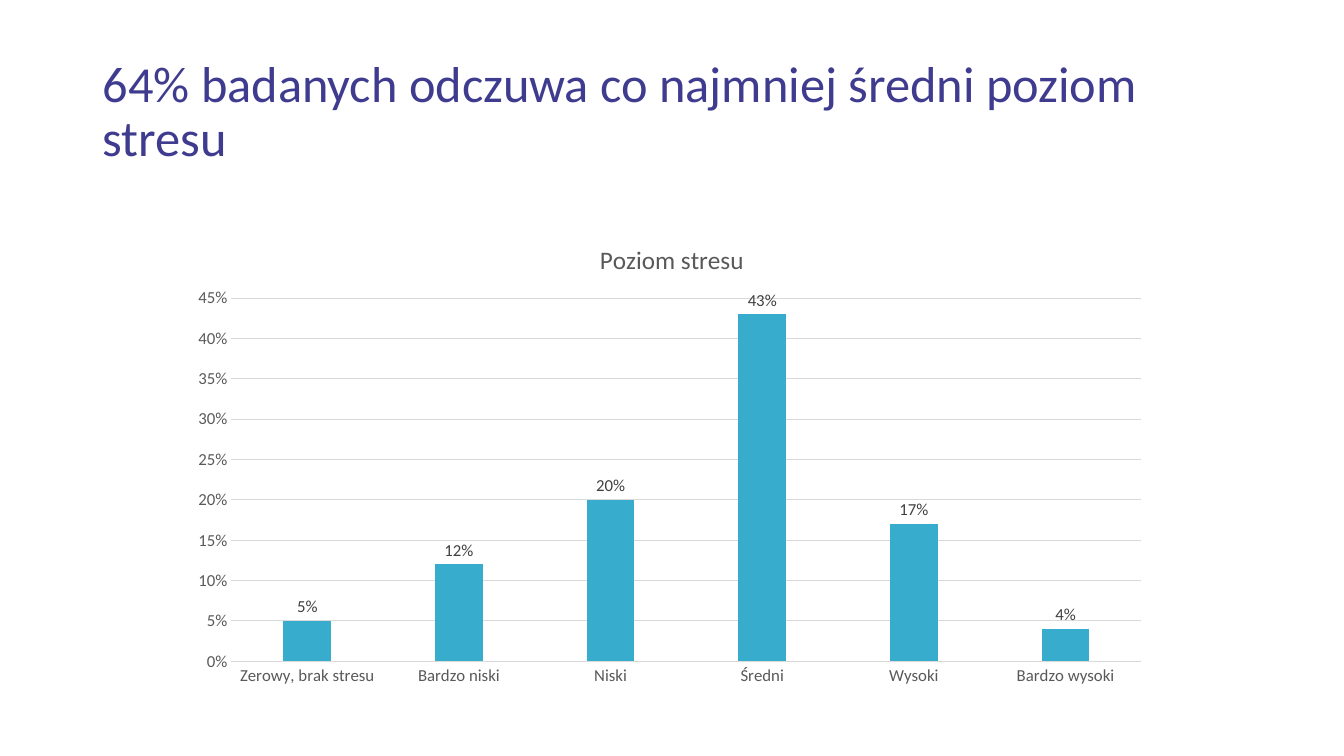
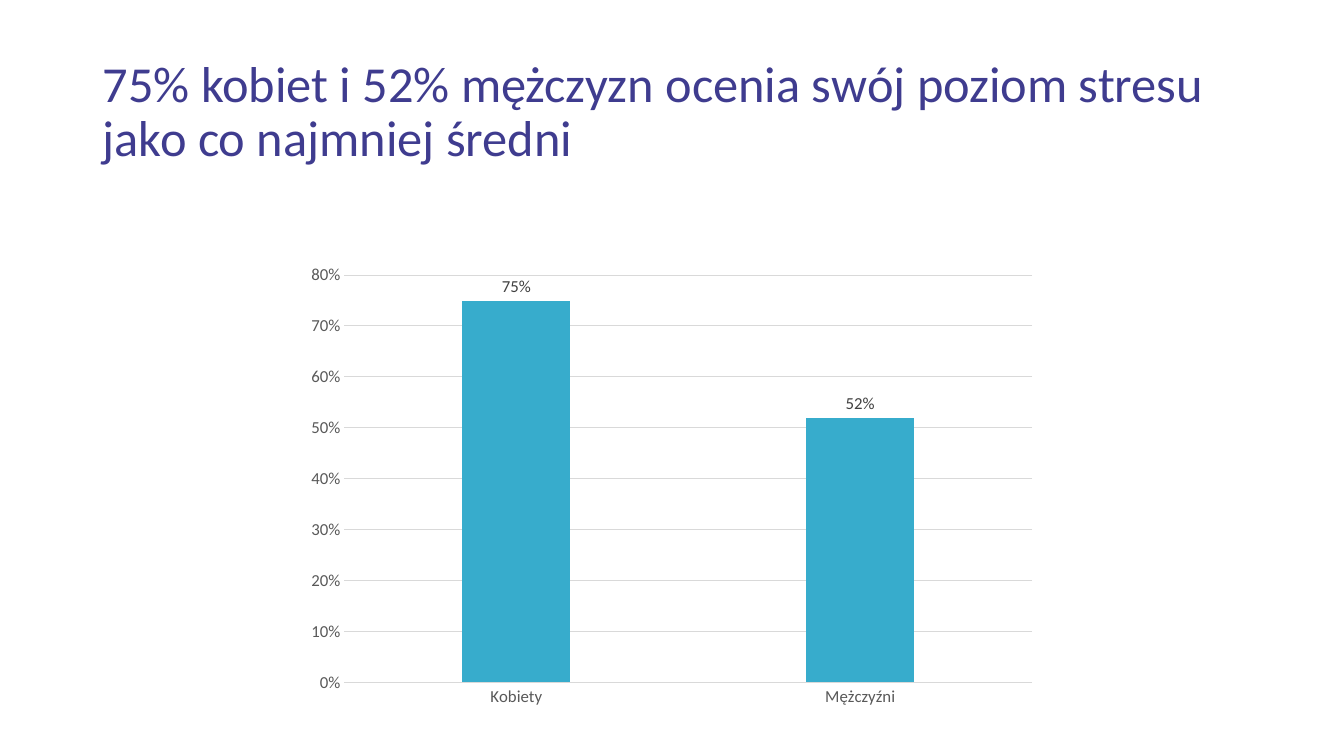
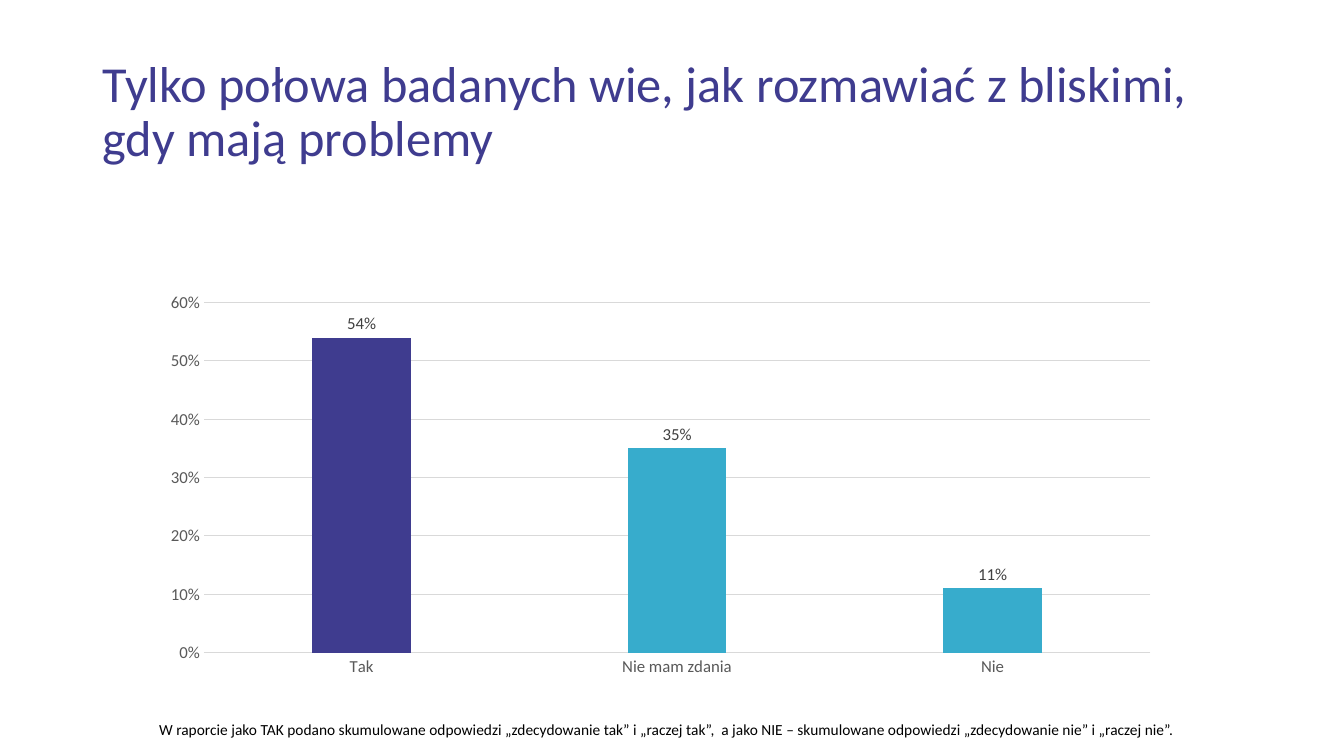
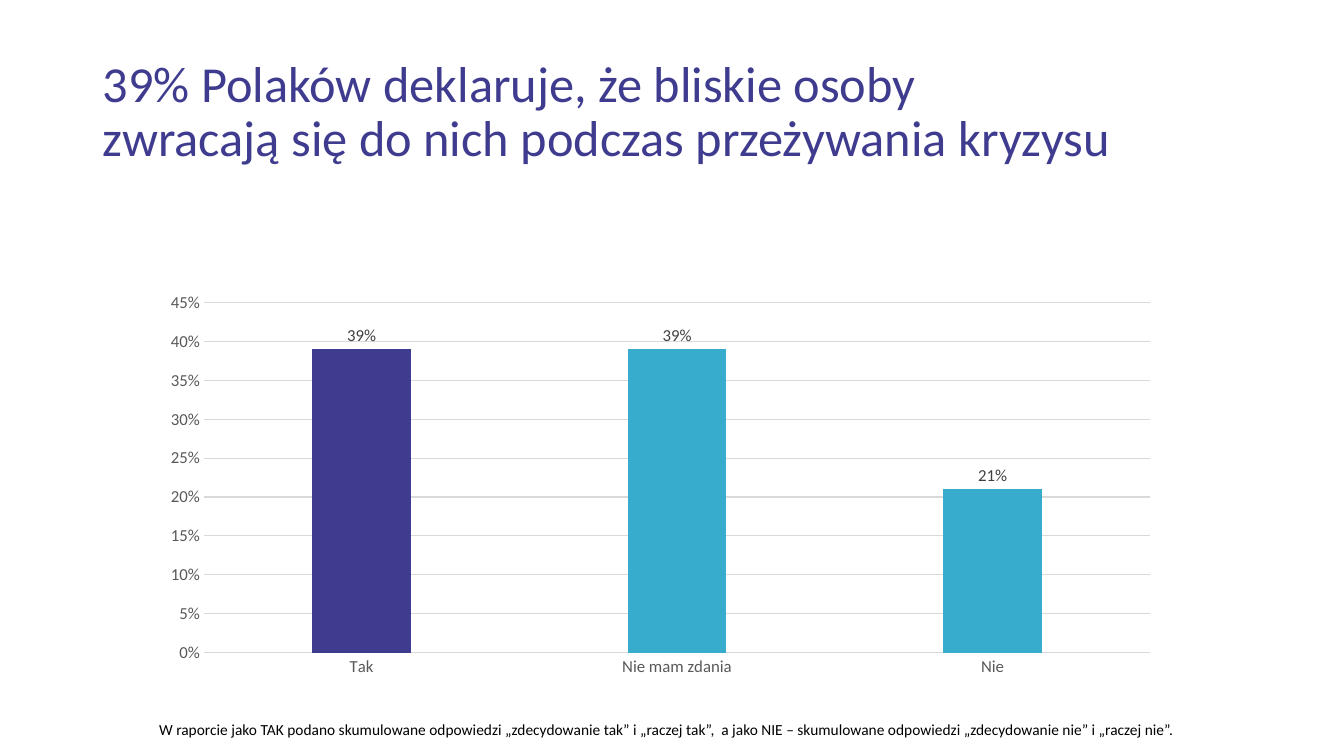
import pptx
import pptx.chart.data
import pptx.dml.color
import pptx.enum.chart
import pptx.enum.text
import pptx.oxml
import pptx.oxml.ns
import pptx.util
from pptx.util import Cm

INDIGO = pptx.dml.color.RGBColor(0x3F, 0x3C, 0x8F)
TEAL = pptx.dml.color.RGBColor(0x37, 0xAC, 0xCC)
BLACK = pptx.dml.color.RGBColor(0, 0, 0)
LABEL_GREY = pptx.dml.color.RGBColor(0x40, 0x40, 0x40)
AXIS_GREY = pptx.dml.color.RGBColor(0x59, 0x59, 0x59)
GRID_GREY = pptx.dml.color.RGBColor(0xD9, 0xD9, 0xD9)

ANSWERS = ("Tak", "Nie mam zdania", "Nie")
ANSWER_FRAME = (Cm(4.11), Cm(6.25), Cm(25.65), Cm(11.46))
ANSWER_PLOT = (0.04, 0.12, 0.93, 0.77)
ANSWER_NOTE = (
    "W raporcie jako TAK podano skumulowane odpowiedzi „zdecydowanie tak” "
    "i „raczej tak”,  a jako NIE – skumulowane odpowiedzi „zdecydowanie nie” "
    "i „raczej nie”."
)


class SurveyDeck:
    font_name = "Calibri"
    title_size = 36
    chart_title_size = 18
    chart_size = 12
    note_size = 11

    def __init__(self):
        self.deck = pptx.Presentation()
        self.deck.slide_width = Cm(33.87)
        self.deck.slide_height = Cm(19.05)
        self.page = None

    def add_page(self, *title_lines, title_width=Cm(29.21)):
        self.page = self.deck.slides.add_slide(self.deck.slide_layouts[6])
        frame = (Cm(2.34), Cm(1.02), title_width, Cm(3.68))
        para = self.add_text(frame, title_lines, self.title_size, INDIGO)
        para.line_spacing = 0.9

    def style_font(self, font, size, color):
        font.name = self.font_name
        font.size = pptx.util.Pt(size)
        font.bold = False
        font.color.rgb = color

    def add_text(self, frame, lines, size, color):
        """Add a text box whose lines form one paragraph, and return the paragraph."""
        text = self.page.shapes.add_textbox(*frame).text_frame
        text.word_wrap = True
        text.vertical_anchor = pptx.enum.text.MSO_ANCHOR.MIDDLE
        para = text.paragraphs[0]
        for number, line in enumerate(lines):
            if number:
                para.add_line_break()
            span = para.add_run()
            span.text = line
            self.style_font(span.font, size, color)
        return para

    def add_note(self, note):
        frame = (Cm(3.76), Cm(18.01), Cm(26.37), Cm(0.74))
        self.add_text(frame, [note], self.note_size, BLACK)

    def add_columns(self, frame, categories, values, top, step,
                    title=None, plot_area=None, highlight=None):
        data = pptx.chart.data.CategoryChartData(number_format="0%")
        data.categories = categories
        data.add_series("Series 1", values)
        kind = pptx.enum.chart.XL_CHART_TYPE.COLUMN_CLUSTERED
        chart = self.page.shapes.add_chart(kind, *frame, data).chart
        self.style_font(chart.font, self.chart_size, AXIS_GREY)
        chart.has_legend = False
        chart.has_title = title is not None
        if title:
            span = chart.chart_title.text_frame.paragraphs[0].add_run()
            span.text = title
            self.style_font(span.font, self.chart_title_size, AXIS_GREY)
        if plot_area:
            self.place_plot(chart, plot_area)
        self.style_axes(chart, top, step)
        self.style_bars(chart.plots[0], highlight)

    def style_axes(self, chart, top, step):
        for axis in (chart.category_axis, chart.value_axis):
            axis.major_tick_mark = pptx.enum.chart.XL_TICK_MARK.NONE
            axis.minor_tick_mark = pptx.enum.chart.XL_TICK_MARK.NONE
            self.style_font(axis.tick_labels.font, self.chart_size, AXIS_GREY)
        scale = chart.value_axis
        scale.minimum_scale, scale.maximum_scale, scale.major_unit = 0, top, step
        scale.has_major_gridlines = True
        scale.format.line.fill.background()
        scale.tick_labels.number_format = "0%"
        scale.tick_labels.number_format_is_linked = False
        for line in (chart.category_axis.format.line, scale.major_gridlines.format.line):
            line.color.rgb = GRID_GREY
            line.width = pptx.util.Pt(0.75)

    def style_bars(self, plot, highlight):
        plot.vary_by_categories = False
        plot.gap_width = 219
        plot.overlap = -27
        series = plot.series[0]
        fills = [(series.format.fill, TEAL)]
        if highlight is not None:
            fills.append((series.points[highlight].format.fill, INDIGO))
        for fill, color in fills:
            fill.solid()
            fill.fore_color.rgb = color
        labels = series.data_labels
        labels.show_value = True
        labels.position = pptx.enum.chart.XL_LABEL_POSITION.OUTSIDE_END
        labels.number_format = "0%"
        labels.number_format_is_linked = False
        self.style_font(labels.font, self.chart_size, LABEL_GREY)

    def place_plot(self, chart, plot_area):
        """Fix the inner plot area, given as fractions of the chart: x, y, width, height."""
        sizes = "".join(f'<c:{name} val="{share}"/>' for name, share in zip("xywh", plot_area))
        layout = pptx.oxml.parse_xml(
            f'<c:layout {pptx.oxml.ns.nsdecls("c")}><c:manualLayout>'
            '<c:layoutTarget val="inner"/><c:xMode val="edge"/><c:yMode val="edge"/>'
            f"{sizes}</c:manualLayout></c:layout>"
        )
        area = chart.element.find(".//" + pptx.oxml.ns.qn("c:plotArea"))
        for old in area.findall(pptx.oxml.ns.qn("c:layout")):
            area.remove(old)
        area.insert(0, layout)

    def add_answers(self, values, top, step):
        self.add_columns(ANSWER_FRAME, ANSWERS, values, top, step,
                         plot_area=ANSWER_PLOT, highlight=0)
        self.add_note(ANSWER_NOTE)


def main():
    survey = SurveyDeck()

    survey.add_page("64% badanych odczuwa co najmniej średni poziom stresu",
                    title_width=Cm(28.27))
    survey.add_columns(
        (Cm(4.6), Cm(5.61), Cm(24.66), Cm(11.89)),
        ("Zerowy, brak stresu", "Bardzo niski", "Niski", "Średni", "Wysoki", "Bardzo wysoki"),
        (0.05, 0.12, 0.2, 0.43, 0.17, 0.04), 0.45, 0.05,
        title="Poziom stresu", plot_area=(0.05, 0.16, 0.93, 0.77))

    survey.add_page("75% kobiet i 52% mężczyzn ocenia swój poziom stresu",
                    "jako co najmniej średni")
    survey.add_columns(
        (Cm(7.47), Cm(6.45), Cm(18.92), Cm(11.58)),
        ("Kobiety", "Mężczyźni"), (0.75, 0.52), 0.8, 0.1)

    survey.add_page("Tylko połowa badanych wie, jak rozmawiać z bliskimi,",
                    "gdy mają problemy")
    survey.add_answers((0.54, 0.35, 0.11), 0.6, 0.1)

    survey.add_page("39% Polaków deklaruje, że bliskie osoby",
                    "zwracają się do nich podczas przeżywania kryzysu")
    survey.add_answers((0.39, 0.39, 0.21), 0.45, 0.05)

    survey.deck.save("out.pptx")


if __name__ == "__main__":
    main()
